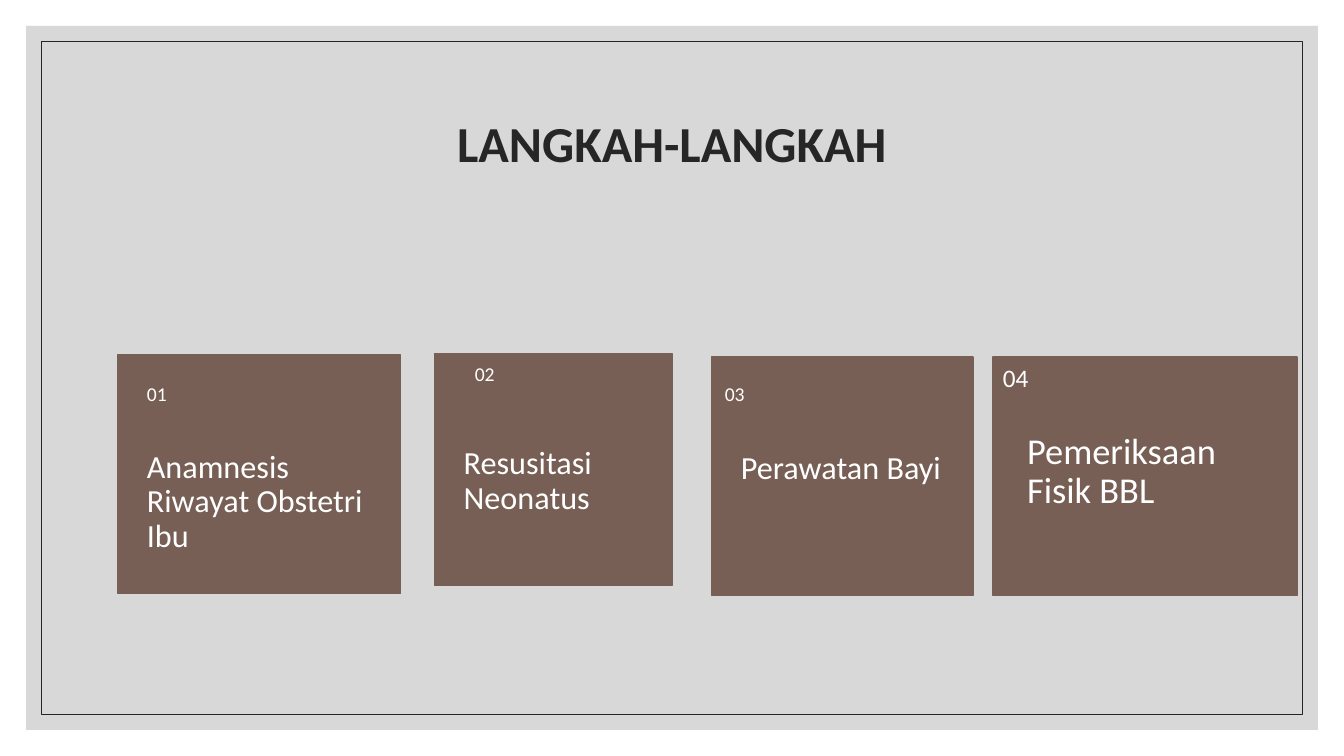
from dataclasses import dataclass

from lxml.etree import SubElement
from pptx import Presentation
from pptx.dml.color import RGBColor
from pptx.enum.shapes import MSO_SHAPE as Preset
from pptx.enum.text import MSO_ANCHOR as Anchor, PP_ALIGN as Align
from pptx.oxml.ns import qn
from pptx.util import Inches, Pt

COLUMNS, ROWS = 160, 90
LABEL_SHARE = 0.6  # part of a card's height taken by its label


@dataclass(frozen=True)
class Theme:
    font: str = "Calibri"
    ink: str = "262626"
    backdrop: str = "BFBFBF"
    card: str = "775F55"
    on_card: str = "FFFFFF"
    title_size: int = 36
    label_size: int = 23
    large_label_size: int = 26
    number_size: int = 14
    large_number_size: int = 18
    tight: float = 0.9


@dataclass(frozen=True)
class Step:
    """A card's box, with its number in a box of its own or in the card."""
    number: str
    label: str
    box: tuple
    number_box: tuple = None
    label_share: float = LABEL_SHARE


STEPS = (
    Step("01", "Anamnesis Riwayat Obstetri Ibu",
         (14, 42.24, 33.7, 28.4), (14, 40.56, 34.9, 13)),
    Step("02", "Resusitasi Neonatus",
         (51.72, 42.12, 28.3, 27.6), (53.04, 41.4, 25.6, 6.5)),
    Step("03", "Perawatan Bayi",
         (84.72, 42.48, 31.1, 28.4), (82.8, 40.56, 34.9, 13)),
    Step("04", "Pemeriksaan Fisik BBL",
         (118.2, 42.48, 36.2, 28.4), label_share=0.68),
)


class Deck:
    def __init__(self, theme):
        self.theme = theme
        self.presentation = Presentation()
        self.presentation.slide_width = Inches(13.33)
        self.presentation.slide_height = Inches(7.5)
        self.column = self.presentation.slide_width / COLUMNS
        self.row = self.presentation.slide_height / ROWS
        self.slide = self.presentation.slides.add_slide(
            self.presentation.slide_layouts[6])

    def place(self, box):
        """Turn columns and rows into slide lengths."""
        left, top, width, height = box
        return (round(left * self.column), round(top * self.row),
                round(width * self.column), round(height * self.row))

    def rectangle(self, box, fill=None, line=None, weight=1, opacity=100):
        panel = self.slide.shapes.add_shape(Preset.RECTANGLE, *self.place(box))
        panel.shadow.inherit = False
        if fill:
            panel.fill.solid()
            panel.fill.fore_color.rgb = RGBColor.from_string(fill)
            if opacity < 100:
                tint = panel.element.spPr.find(f".//{qn('a:srgbClr')}")
                SubElement(tint, qn("a:alpha"), val=str(opacity * 1000))
        else:
            panel.fill.background()
        if line:
            panel.line.color.rgb = RGBColor.from_string(line)
            panel.line.width = Pt(weight)
        else:
            panel.line.fill.background()
        return panel

    def margin_frame(self, margin, **style):
        box = (margin, margin, COLUMNS - 2 * margin, ROWS - 2 * margin)
        self.rectangle(box, **style)

    def set_words(self, holder, words, size, color, bold=False,
                  align=Align.LEFT, anchor=Anchor.TOP, spacing=1.0,
                  insets=None):
        """Fill a shape with words; insets are left, top, right, bottom."""
        frame = holder.text_frame
        frame.word_wrap = True
        frame.vertical_anchor = anchor
        if insets:
            left, top, right, bottom = insets
            frame.margin_left = round(left * self.column)
            frame.margin_top = round(top * self.row)
            frame.margin_right = round(right * self.column)
            frame.margin_bottom = round(bottom * self.row)
        frame.text = words
        paragraph = frame.paragraphs[0]
        paragraph.alignment = align
        paragraph.line_spacing = spacing
        font = paragraph.runs[0].font
        font.name, font.size, font.bold = self.theme.font, Pt(size), bold
        font.color.rgb = RGBColor.from_string(color)

    def text(self, box, words, size, color, **style):
        holder = self.slide.shapes.add_textbox(*self.place(box))
        self.set_words(holder, words, size, color,
                       spacing=self.theme.tight, **style)

    def title(self, box, words):
        self.text(box, words, self.theme.title_size, self.theme.ink,
                  bold=True, align=Align.CENTER, anchor=Anchor.MIDDLE)

    def step(self, step):
        theme = self.theme
        left, top, width, height = step.box
        large = step.number_box is None
        side = 4.08 if large else 3.48
        card = self.rectangle(step.box, fill=theme.card, line=theme.card)
        label_height = height * step.label_share
        self.text((left, top + height - label_height, width, label_height),
                  step.label,
                  theme.large_label_size if large else theme.label_size,
                  theme.on_card, insets=(side, 0, side, 4.32))
        if large:
            self.set_words(card, step.number, theme.large_number_size,
                           theme.on_card)
        else:
            self.text(step.number_box, step.number, theme.number_size,
                      theme.on_card, anchor=Anchor.MIDDLE,
                      insets=(side, 2.16, side, 2.16))


def main():
    theme = Theme()
    deck = Deck(theme)
    deck.margin_frame(3.1, fill=theme.backdrop, opacity=60)
    deck.margin_frame(4.9, line=theme.ink, weight=0.5)
    deck.title((14, 8.4, 132, 18), "LANGKAH-LANGKAH")
    for step in STEPS:
        deck.step(step)
    deck.presentation.save("out.pptx")


if __name__ == "__main__":
    main()
